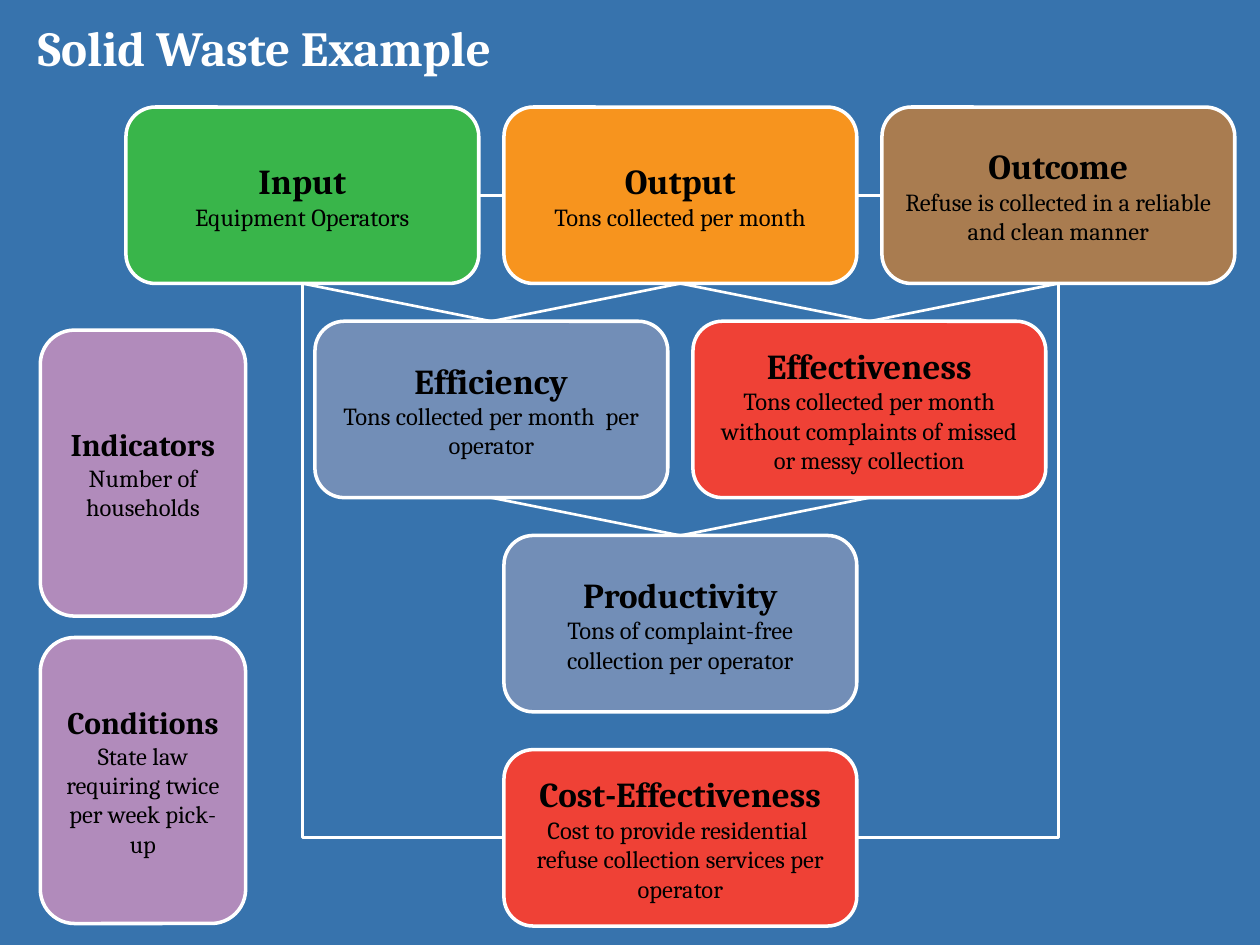
"""Build the solid waste performance measures slide."""
import pptx
import pptx.dml.color
import pptx.enum.shapes
import pptx.enum.text
import pptx.oxml
import pptx.util

Inches = pptx.util.Inches
Pt = pptx.util.Pt
RGBColor = pptx.dml.color.RGBColor
MSO_CONNECTOR = pptx.enum.shapes.MSO_CONNECTOR
PP_ALIGN = pptx.enum.text.PP_ALIGN
MSO_ANCHOR = pptx.enum.text.MSO_ANCHOR

BLUE = RGBColor(0x37, 0x73, 0xAD)
WHITE = RGBColor(0xFF, 0xFF, 0xFF)
BLACK = RGBColor(0x00, 0x00, 0x00)
GREEN = RGBColor(0x39, 0xB5, 0x4A)
ORANGE = RGBColor(0xF7, 0x94, 0x1E)
BROWN = RGBColor(0xA9, 0x7C, 0x50)
SLATE = RGBColor(0x72, 0x8E, 0xB7)
RED = RGBColor(0xEF, 0x41, 0x36)
PURPLE = RGBColor(0xB1, 0x8B, 0xBB)

TOP, LEFT, BOTTOM, RIGHT = range(4)


def write(paragraph, text, size, bold=False, color=BLACK, align=PP_ALIGN.CENTER):
    paragraph.alignment = align
    run = paragraph.add_run()
    run.text = text
    run.font.name = "Cambria"
    run.font.size = Pt(size)
    run.font.bold = bold
    run.font.color.rgb = color


def add_box(left, top, width, height, fill, heading, detail, heading_size):
    box = slide.shapes.add_shape(
        pptx.enum.shapes.MSO_SHAPE.ROUNDED_RECTANGLE,
        Inches(left), Inches(top), Inches(width), Inches(height))
    box.shadow.inherit = False
    box.fill.solid()
    box.fill.fore_color.rgb = fill
    box.line.color.rgb = WHITE
    box.line.width = Pt(2)
    frame = box.text_frame
    frame.word_wrap = True
    frame.vertical_anchor = MSO_ANCHOR.MIDDLE
    write(frame.paragraphs[0], heading, heading_size, bold=True)
    write(frame.add_paragraph(), detail, 14)
    return box


deck = pptx.Presentation()
deck.slide_width = Inches(10)
deck.slide_height = Inches(7.5)
slide = deck.slides.add_slide(deck.slide_layouts[5])
slide.background.fill.solid()
slide.background.fill.fore_color.rgb = BLUE

title = slide.shapes.title
title.left, title.top, title.width, title.height = Inches(0.2), Inches(0), Inches(9), Inches(0.75)
title.text_frame.auto_size = pptx.enum.text.MSO_AUTO_SIZE.NONE
title.text_frame.vertical_anchor = MSO_ANCHOR.MIDDLE
write(title.text_frame.paragraphs[0], "Solid Waste Example", 28,
      bold=True, color=WHITE, align=PP_ALIGN.LEFT)

measures = [
    (1, 0, GREEN, "Input", "Equipment Operators"),
    (4, 0, ORANGE, "Output", "Tons collected per month"),
    (7, 0, BROWN, "Outcome", "Refuse is collected in a reliable and clean manner"),
    (2.5, 1, SLATE, "Efficiency", "Tons collected per month  per operator"),
    (4, 2, SLATE, "Productivity", "Tons of complaint-free collection per operator"),
    (5.5, 1, RED, "Effectiveness",
     "Tons collected per month without complaints of missed or messy collection"),
    (4, 3, RED, "Cost-Effectiveness",
     "Cost to provide residential  refuse collection services per operator"),
]
boxes = {}
for left, row, fill, heading, detail in measures:
    boxes[heading] = add_box(left, 0.85 + 1.7 * row, 2.8, 1.4, fill, heading, detail, 20)

links = [
    ("Input", BOTTOM, "Efficiency", TOP),
    ("Efficiency", TOP, "Output", BOTTOM),
    ("Output", BOTTOM, "Effectiveness", TOP),
    ("Effectiveness", TOP, "Outcome", BOTTOM),
    ("Efficiency", BOTTOM, "Productivity", TOP),
    ("Productivity", TOP, "Effectiveness", BOTTOM),
    ("Cost-Effectiveness", RIGHT, "Outcome", BOTTOM),
    ("Cost-Effectiveness", LEFT, "Input", BOTTOM),
    ("Input", RIGHT, "Output", LEFT),
    ("Output", RIGHT, "Outcome", LEFT),
]
for source, source_side, target, target_side in links:
    bent = source == "Cost-Effectiveness"
    link = slide.shapes.add_connector(
        MSO_CONNECTOR.ELBOW if bent else MSO_CONNECTOR.STRAIGHT, 0, 0, 0, 0)
    link.begin_connect(boxes[source], source_side)
    link.end_connect(boxes[target], target_side)
    link.line.color.rgb = WHITE
    link.line.width = Pt(1.5)
    properties = link._element.spPr
    properties.append(pptx.oxml.parse_xml(
        '<a:effectLst xmlns:a="http://schemas.openxmlformats.org/drawingml/2006/main"/>'))
    if bent:
        properties.find(pptx.oxml.ns.qn("a:prstGeom")).set("prst", "bentConnector2")

context = [
    ("Indicators", "Number of households"),
    ("Conditions", "State law requiring twice per week pick-up"),
]
for row, (heading, detail) in enumerate(context):
    add_box(0.32, 2.62 + 2.44 * row, 1.63, 2.27, PURPLE, heading, detail, 18)

deck.save("out.pptx")
